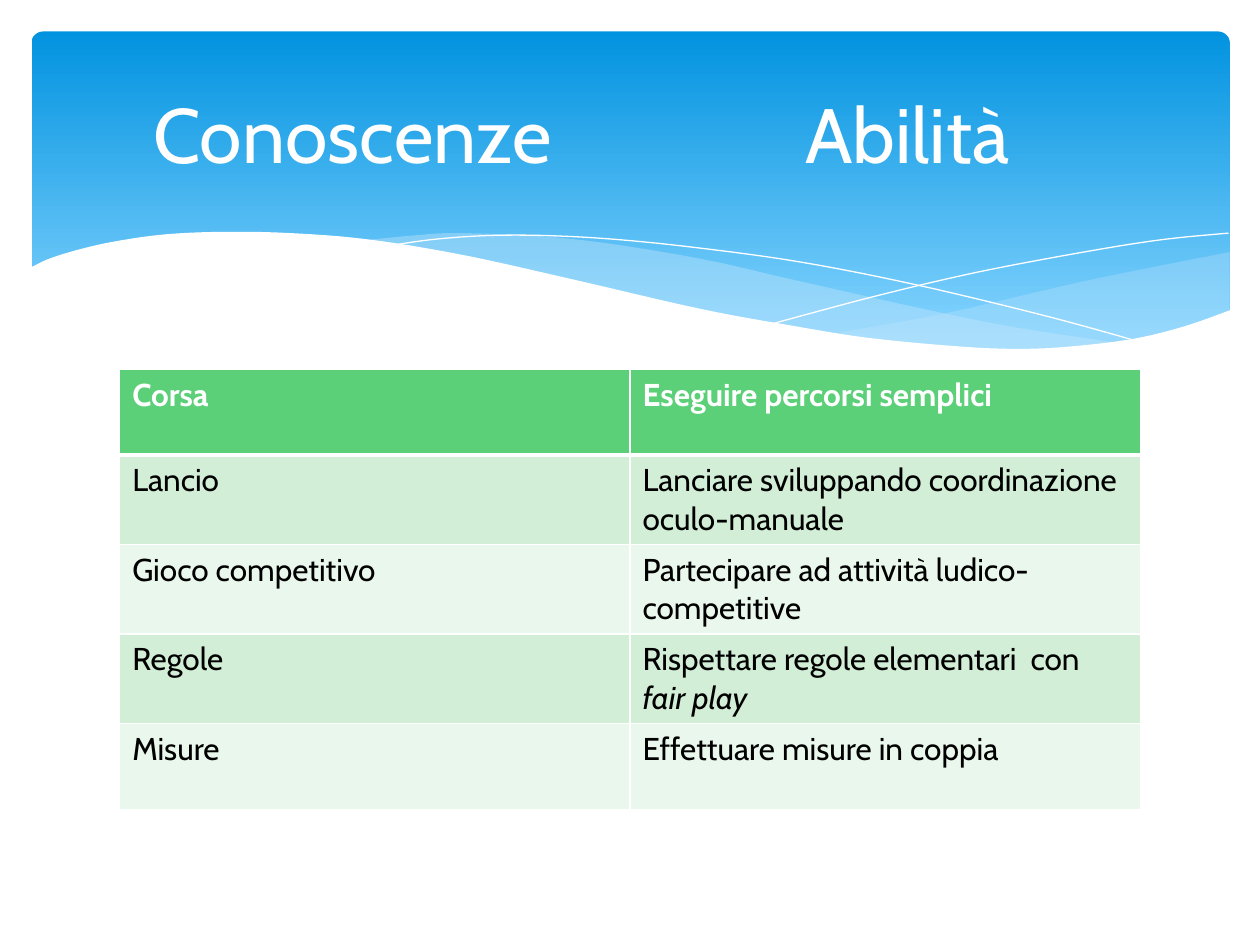
from lxml import etree
from pptx import Presentation
from pptx.dml.color import RGBColor as RGB
from pptx.enum.shapes import MSO_SHAPE as SHAPE
from pptx.enum.text import MSO_ANCHOR as ANCHOR, PP_ALIGN as ALIGN
from pptx.oxml import parse_xml
from pptx.oxml.ns import nsdecls, qn
from pptx.util import Pt


def color(value):
    return RGB.from_string(value)


def smooth(points, steps=6):
    """Points of a Catmull-Rom curve through the given anchors."""
    padded = [points[0], *points, points[-1]]
    curve = [points[0]]
    for a, b, c, d in zip(padded, padded[1:], padded[2:], padded[3:]):
        for t in (n / steps for n in range(1, steps + 1)):
            curve.append(tuple(
                (2 * q + (r - p) * t + (2 * p - 5 * q + 4 * r - u) * t ** 2
                 + (3 * q - p - 3 * r + u) * t ** 3) / 2
                for p, q, r, u in zip(a, b, c, d)))
    return curve


class Deck:
    font = "Cabin"
    white, black = "FFFFFF", "000000"
    unit = 100  # freeform units per point

    def __init__(self, width, height):
        self.prs = Presentation()
        self.prs.slide_width, self.prs.slide_height = Pt(width), Pt(height)
        self.s = self.prs.slides.add_slide(self.prs.slide_layouts[6])

    def run(self, p, text, size, fill, **extra):
        r = p.add_run()
        r.text = text
        for key, value in {"name": self.font, "size": Pt(size), **extra}.items():
            setattr(r.font, key, value)
        r.font.color.rgb = color(fill)

    def banner(self, box, top, bottom):
        sp = self.s.shapes.add_shape(SHAPE.ROUNDED_RECTANGLE, *map(Pt, box))
        sp.shadow.inherit = False
        sp.adjustments[0] = 0.034
        sp.line.fill.background()
        sp.fill.gradient()
        sp.fill.gradient_angle = 270
        for stop, value, place in zip(sp.fill.gradient_stops, (top, bottom), (0, 0.9)):
            stop.color.rgb = color(value)
            stop.position = place

    def outline(self, points, closed):
        first, *rest = [(x * self.unit, y * self.unit) for x, y in points]
        builder = self.s.shapes.build_freeform(*first, scale=Pt(1) / self.unit)
        builder.add_line_segments(rest, close=closed)
        sp = builder.convert_to_shape()
        sp.shadow.inherit = False
        return sp

    def wave(self, edges, fill, opacity=100):
        sp = self.outline([pt for edge in edges for pt in smooth(edge)], True)
        sp.line.fill.background()
        sp.fill.solid()
        sp.fill.fore_color.rgb = color(fill)
        if opacity < 100:
            rgb = sp.fill._xPr.find(".//" + qn("a:srgbClr"))
            etree.SubElement(rgb, qn("a:alpha"), val=str(opacity * 1000))

    def curve(self, points):
        sp = self.outline(smooth(points), False)
        sp.fill.background()
        sp.line.color.rgb = color(self.white)
        sp.line.width = Pt(0)

    def title(self, text, box, size):
        sp = self.s.shapes.add_textbox(*map(Pt, box))
        tf = sp.text_frame
        tf.word_wrap = True
        tf.vertical_anchor = ANCHOR.MIDDLE
        tf._txBody.bodyPr.set("numCol", "2")
        p = tf.paragraphs[0]
        p.alignment = ALIGN.CENTER
        self.run(p, text, size, self.white)

    def borders(self, cell, **widths):
        tc_pr = cell._tc.get_or_add_tcPr()
        for i, side in enumerate("LRTB"):
            tc_pr.insert(i, parse_xml(
                f'<a:ln{side} {nsdecls("a")} w="{Pt(widths.get(side, 1))}">'
                f'<a:solidFill><a:srgbClr val="{self.white}"/></a:solidFill></a:ln{side}>'))

    def table(self, rows, box, size, head, bands):
        tbl = self.s.shapes.add_table(len(rows), len(rows[0]), *map(Pt, box)).table
        tbl.horz_banding = False
        for i, row in enumerate(rows):
            for j, text in enumerate(row):
                cell = tbl.cell(i, j)
                cell.fill.solid()
                cell.fill.fore_color.rgb = color(bands[(i - 1) % 2] if i else head)
                self.borders(cell, **({0: {"B": 3}, 1: {"T": 3}}.get(i, {})))
                parts = (text,) if isinstance(text, str) else text
                for k, part in enumerate(parts):
                    self.run(cell.text_frame.paragraphs[0], part, size,
                             self.black if i else self.white,
                             bold=i == 0, italic=k > 0)


# Wave edges
RIGHT_WAVE = [
    [(702.7, 144), (619.9, 160.6), (542.2, 178.6), (475.9, 190.8)],
    [(475.9, 190.8), (517.7, 195.8), (553.7, 199.4), (586.1, 200.2), (621.4, 198),
     (651.6, 193.7), (678.2, 186.5), (702.7, 177.8)],
]
LEFT_WAVE = [
    [(643, 196.6), (581, 187.2), (533.5, 177.8), (452.9, 159.8), (409.7, 149.8),
     (370.1, 142.6), (334.8, 137.5), (302.4, 134.6), (259.9, 133.2),
     (236.2, 134.6), (205.9, 137.5)],
    [(205.9, 137.5), (246.2, 143.3), (290.9, 151.9), (323.3, 159.8), (381.6, 172.8),
     (432.7, 183.6), (478.8, 191.5), (519.8, 197.3), (556.6, 199.4), (589, 200.2),
     (617, 199.4), (643, 196.6)],
]
FALLING_LINE = [
    (222.5, 140.4), (247.7, 136.8), (278.6, 134.6), (311.8, 134.6), (352.1, 136.8),
    (400.3, 141.8), (457.9, 149.8), (523.4, 162.7), (598.3, 180.7), (653, 195.8)]
RISING_LINE = [
    (441.4, 185), (500.4, 169.2), (558.7, 155.5), (623.5, 143.3), (665.3, 136.8),
    (702, 133.2)]
WHITE_WAVE = [
    [(703.4, 177.1), (676.8, 186.5), (647.3, 193.7), (612, 198), (582.5, 199.4),
     (547.9, 198), (495.4, 193), (450.7, 185.8), (399.6, 176.4), (321.8, 158.4),
     (262.8, 145.4), (210.2, 136.8), (165.6, 133.2), (127.4, 132.5), (95, 133.9),
     (68.4, 137.5), (48.2, 141.8), (28.8, 147.6), (16.6, 153.4)],
    [(16.6, 236.9), (703.4, 236.9)],
]

ROWS = [
    ("Corsa", "Eseguire percorsi semplici"),
    ("Lancio", "Lanciare sviluppando coordinazione oculo-manuale"),
    ("Gioco competitivo", "Partecipare ad attività ludico-competitive"),
    ("Regole", ("Rispettare regole elementari  con ", "fair play")),
    ("Misure", "Effettuare misure in coppia"),
]


def main():
    deck = Deck(720, 540)

    # Banner with waves
    deck.banner((18, 18, 684.7, 194.4), "0293E0", "83D3FE")
    deck.wave(RIGHT_WAVE, "C6E7FC", 29)
    deck.wave(LEFT_WAVE, "C6E7FC", 40)
    deck.curve(FALLING_LINE)
    deck.curve(RISING_LINE)
    deck.wave(WHITE_WAVE, deck.white)

    # Table and two-column title
    deck.table(ROWS, (68.4, 211, 583.2, 245), 18, "5BD078", ("D2EED6", "EAF7EC"))
    deck.title("Conoscenze Abilità", (36, 26.6, 648, 98.6), 44)

    deck.prs.save("out.pptx")


if __name__ == "__main__":
    main()
